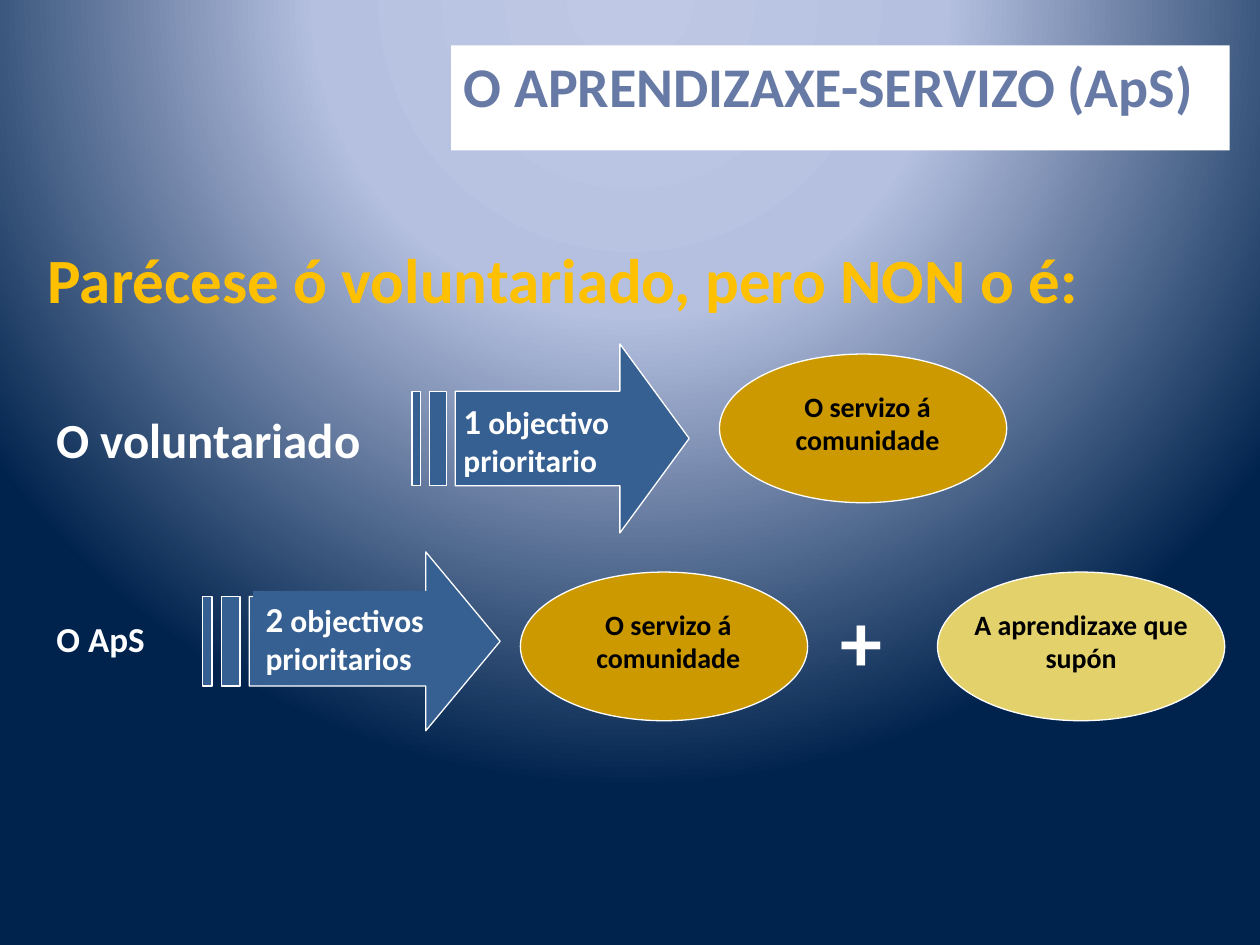
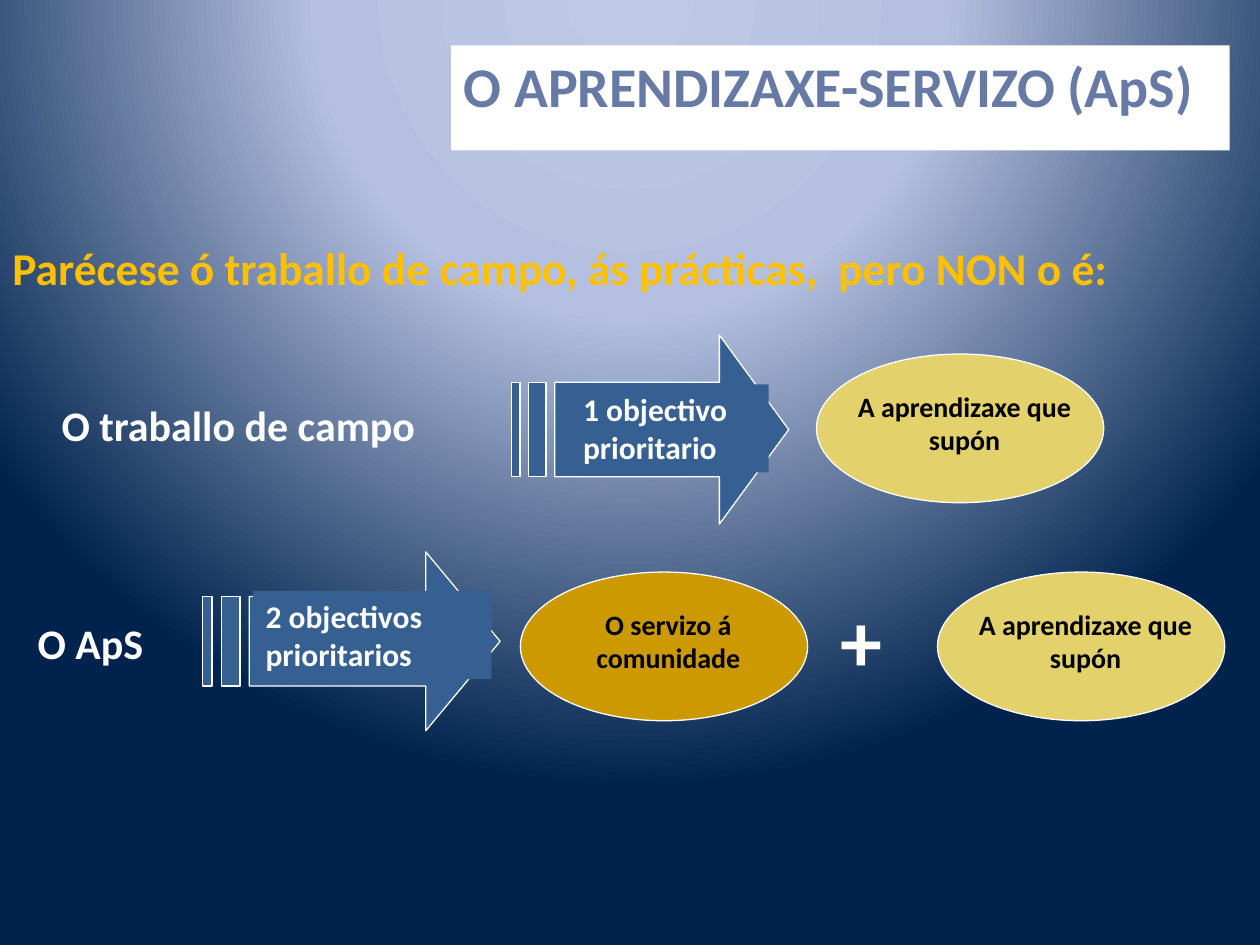
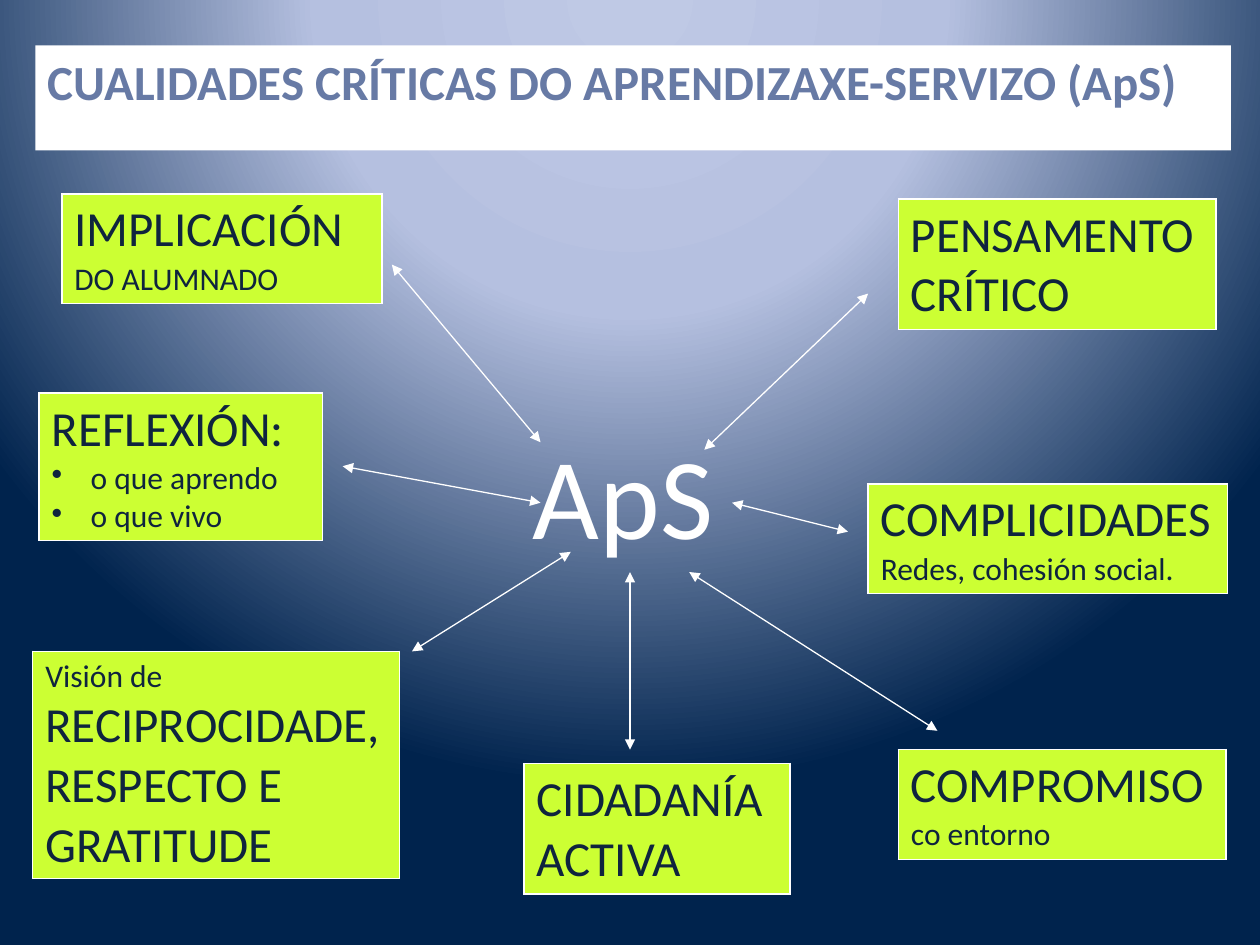
import pptx
import pptx.dml.color
import pptx.enum.shapes
import pptx.enum.text
import pptx.oxml
import pptx.oxml.ns
import pptx.util

Inches = pptx.util.Inches
RGBColor = pptx.dml.color.RGBColor
PP_ALIGN = pptx.enum.text.PP_ALIGN

# Shared look
FONT = "Calibri"
WHITE = RGBColor(0xFF, 0xFF, 0xFF)
BLACK = RGBColor(0x00, 0x00, 0x00)
TITLE_BLUE = RGBColor(0x67, 0x7A, 0xA5)
ARROW_BLUE = RGBColor(0x37, 0x60, 0x92)
AMBER = RGBColor(0xFF, 0xC0, 0x00)
SERVICE_GOLD = RGBColor(0xCC, 0x99, 0x00)
LEARNING_YELLOW = RGBColor(0xE3, 0xD2, 0x6B)
LIME = RGBColor(0xCC, 0xFF, 0x33)
NAVY = RGBColor(0x0F, 0x24, 0x3E)
GLOW_STOPS = [(0, "BFC9E5"), (40, "B5C0E0"), (100, "00234D")]

SERVICE = "O servizo á comunidade"
LEARNING = "A aprendizaxe que supón"
OVAL_WIDTH, OVAL_HEIGHT = 2.28, 1.18


def xml(tag, attributes="", children=""):
    return (f'<{tag} {pptx.oxml.ns.nsdecls("a", "p")} {attributes}>'
            f'{children}</{tag}>')


def set_background(master):
    """Give every slide the radial glow through the master."""
    stops = "".join(f'<a:gs pos="{pos * 1000}"><a:srgbClr val="{color}"/></a:gs>'
                    for pos, color in GLOW_STOPS)
    background = pptx.oxml.parse_xml(xml("p:bg", children=(
        f'<p:bgPr><a:gradFill rotWithShape="1"><a:gsLst>{stops}</a:gsLst>'
        '<a:path path="circle">'
        '<a:fillToRect l="50000" t="-80000" r="50000" b="180000"/></a:path>'
        '</a:gradFill><a:effectLst/></p:bgPr>')))
    common = master.element.find(pptx.oxml.ns.qn("p:cSld"))
    old = common.find(pptx.oxml.ns.qn("p:bg"))
    if old is not None:
        common.remove(old)
    common.insert(0, background)


def write(frame, paragraphs, size=18, color=WHITE, bold=False,
          align=PP_ALIGN.LEFT, bullets_from=None):
    """Fill a frame; a paragraph is a string or a list of (text, size) runs."""
    frame.word_wrap = True
    for index, content in enumerate(paragraphs):
        paragraph = frame.paragraphs[0] if index == 0 else frame.add_paragraph()
        paragraph.alignment = align
        runs = [(content, size)] if isinstance(content, str) else content
        for text, run_size in runs:
            run = paragraph.add_run()
            run.text = text
            run.font.name = FONT
            run.font.size = pptx.util.Pt(run_size)
            run.font.bold = bold
            run.font.color.rgb = color
        if bullets_from is not None and index >= bullets_from:
            properties = paragraph._p.get_or_add_pPr()
            properties.set("marL", str(Inches(0.31)))
            properties.set("indent", str(-Inches(0.31)))
            properties.append(pptx.oxml.parse_xml(xml("a:buChar", 'char="•"')))


def add_text(slide, left, top, width, height, content, fill=None, **text_format):
    box = slide.shapes.add_textbox(*map(Inches, (left, top, width, height)))
    if fill is not None:
        box.fill.solid()
        box.fill.fore_color.rgb = fill
    write(box.text_frame, [content], **text_format)


def add_title(slide, left, width, height, text, size):
    title = slide.shapes.title
    title.left, title.top = Inches(left), Inches(0.36)
    title.width, title.height = Inches(width), Inches(height)
    title.fill.solid()
    title.fill.fore_color.rgb = WHITE
    frame = title.text_frame
    frame.vertical_anchor = pptx.enum.text.MSO_ANCHOR.TOP
    frame.auto_size = pptx.enum.text.MSO_AUTO_SIZE.SHAPE_TO_FIT_TEXT
    write(frame, [text], size=size, color=TITLE_BLUE, bold=True)


def paint(shape, fill):
    shape.shadow.inherit = False
    shape.fill.solid()
    shape.fill.fore_color.rgb = fill
    shape.line.color.rgb = WHITE
    shape.line.width = pptx.util.Pt(0.75)


def add_striped_arrow(slide, left, top, width, height):
    """Right arrow with two stripes behind it, in 32nds of its width."""
    def point(x32, y4):
        return Inches(left + width * x32 / 32), Inches(top + height * y4 / 4)

    arrow = [(24, 0), (24, 1), (5, 1), (5, 3), (24, 3), (24, 4), (32, 2)]
    stripes = [[(a, 1), (a, 3), (b, 3), (b, 1)] for a, b in ((2, 4), (0, 1))]
    builder = slide.shapes.build_freeform(*point(*arrow[0]), scale=1.0)
    builder.add_line_segments([point(*p) for p in arrow[1:]], close=True)
    for stripe in stripes:
        builder.move_to(*point(*stripe[0]))
        builder.add_line_segments([point(*p) for p in stripe[1:]], close=True)
    paint(builder.convert_to_shape(), ARROW_BLUE)


def add_goal(slide, left, top, text, fill, inset=0.23):
    """Oval with its caption laid over it."""
    oval = slide.shapes.add_shape(
        pptx.enum.shapes.MSO_SHAPE.OVAL,
        *map(Inches, (left, top, OVAL_WIDTH, OVAL_HEIGHT)))
    paint(oval, fill)
    width = 1.89 if inset else OVAL_WIDTH
    add_text(slide, left + inset, top + 0.23, width, 0.64, text,
             size=16, color=BLACK, bold=True, align=PP_ALIGN.CENTER)


def add_aps_row(slide, label, patch, learning_inset):
    """Lower row: ApS has two goals, service plus learning."""
    add_striped_arrow(slide, 1.61, 4.38, 2.36, 1.42)
    add_text(slide, *label[:4], "O ApS", size=label[4], bold=True)
    patch_width, patch_height, patch_text = patch
    add_text(slide, 2.01, 4.69, patch_width, patch_height, patch_text,
             fill=ARROW_BLUE, bold=True)
    add_goal(slide, 4.13, 4.54, SERVICE, SERVICE_GOLD)
    add_goal(slide, 7.44, 4.54, LEARNING, LEARNING_YELLOW, learning_inset)
    add_text(slide, 6.57, 4.62, 0.71, 0.9, "+", size=48, bold=True)


def add_quality(slide, left, top, width, height, paragraphs, fill=LIME,
                **text_format):
    """One-cell table; without a fill it has no borders either."""
    table = slide.shapes.add_table(
        1, 1, *map(Inches, (left, top, width, height))).table
    table.first_row = table.horz_banding = False
    cell = table.cell(0, 0)
    write(cell.text_frame, paragraphs, **text_format)
    if fill is None:
        cell.fill.background()
        border = "<a:noFill/>"
    else:
        cell.fill.solid()
        cell.fill.fore_color.rgb = fill
        border = f'<a:solidFill><a:srgbClr val="{WHITE}"/></a:solidFill>'
    properties = cell._tc.get_or_add_tcPr()
    for index, side in enumerate("LRTB"):
        properties.insert(index, pptx.oxml.parse_xml(
            xml(f"a:ln{side}", 'w="12700"', border)))


def add_double_arrow(slide, start, end):
    arrow = slide.shapes.add_connector(
        pptx.enum.shapes.MSO_CONNECTOR.STRAIGHT, *map(Inches, start + end))
    arrow.line.color.rgb = WHITE
    arrow.line.width = pptx.util.Pt(0.75)
    line = arrow.line._get_or_add_ln()
    for tip in ("headEnd", "tailEnd"):
        line.append(pptx.oxml.parse_xml(xml(f"a:{tip}", 'type="triangle"')))
    arrow._element.spPr.append(pptx.oxml.parse_xml(xml("a:effectLst")))


def build_comparison(slide, heading, heading_place, heading_size):
    add_title(slide, 3.58, 6.18, 0.64, "O APRENDIZAXE-SERVIZO (ApS)", 32)
    add_text(slide, *heading_place, heading, size=heading_size,
             color=AMBER, bold=True)


def build_volunteering(slide):
    build_comparison(slide, "Parécese ó voluntariado, pero NON o é:",
                     (0.28, 1.86, 9.72, 0.71), 36)
    add_text(slide, 0.35, 3.2, 2.84, 0.57, "O voluntariado", size=28, bold=True)
    add_striped_arrow(slide, 3.27, 2.73, 2.2, 1.5)
    add_text(slide, 3.58, 3.12, 1.57, 0.74,
             [("1", 20), (" objectivo prioritario", 18)], bold=True)
    add_goal(slide, 5.71, 2.81, SERVICE, SERVICE_GOLD)
    add_aps_row(slide, (0.35, 4.85, 1.1, 0.43, 20),
                (1.5, 0.74, [("2", 20), (" objectivos prioritarios", 18)]), 0)


def build_fieldwork(slide):
    build_comparison(
        slide, "Parécese ó traballo de campo, ás prácticas,  pero NON o é:",
        (0, 1.86, 10, 0.54), 26)
    add_text(slide, 0.39, 3.12, 3.71, 0.51, "O traballo de campo",
             size=24, bold=True)
    add_striped_arrow(slide, 4.06, 2.66, 2.2, 1.5)
    add_text(slide, 4.53, 3.05, 1.57, 0.7, "1 objectivo prioritario",
             fill=ARROW_BLUE, bold=True)
    add_goal(slide, 6.48, 2.81, LEARNING, LEARNING_YELLOW)
    add_aps_row(slide, (0.2, 4.85, 1.26, 0.5, 24),
                (1.89, 0.7, "2 objectivos prioritarios"), 0.23)


def build_qualities(slide):
    add_title(slide, 0.28, 9.49, 0.57,
              "CUALIDADES CRÍTICAS DO APRENDIZAXE-SERVIZO (ApS)", 28)

    # Qualities around the centre
    qualities = [
        (0.49, 1.54, 2.54, 0.87, [[("IMPLICACIÓN", 28), (" DO ALUMNADO", 18)]]),
        (7.13, 1.58, 2.52, 1.03, ["PENSAMENTO CRÍTICO"]),
        (0.26, 5.17, 2.91, 1.8,
         [[("Visión de ", 18), ("RECIPROCIDADE, RESPECTO E GRATITUDE", 28)]]),
        (7.13, 5.95, 2.6, 0.87, [[("COMPROMISO ", 28), ("co entorno", 18)]]),
        (6.89, 3.84, 2.85, 0.87,
         ["COMPLICIDADES", [("Redes, cohesión social.", 18)]]),
        (4.16, 6.06, 2.11, 1.03, ["CIDADANÍA ACTIVA"]),
    ]
    for quality in qualities:
        add_quality(slide, *quality, size=28, color=NAVY)
    add_quality(slide, 0.31, 3.12, 2.25, 1.17,
                ["REFLEXIÓN:", [("o que aprendo", 18)], [("o que vivo", 18)]],
                size=28, color=NAVY, bullets_from=1)
    add_quality(slide, 4.13, 3.36, 1.97, 1.2, ["ApS"], fill=None, size=66)

    # Links between the centre and each quality
    links = [
        ((3.11, 2.1), (4.29, 3.51)),
        ((5.59, 3.57), (6.89, 2.33)),
        ((4.29, 3.99), (2.72, 3.7)),
        ((4.53, 4.38), (3.27, 5.17)),
        ((5, 4.54), (5, 5.95)),
        ((5.81, 3.99), (6.73, 4.22)),
        ((5.47, 4.54), (7.44, 5.8)),
    ]
    for start, end in links:
        add_double_arrow(slide, start, end)


def main():
    deck = pptx.Presentation()
    deck.slide_width, deck.slide_height = Inches(10), Inches(7.5)
    set_background(deck.slide_master)
    title_only = deck.slide_layouts[5]
    for build in (build_volunteering, build_fieldwork, build_qualities):
        build(deck.slides.add_slide(title_only))
    deck.save("out.pptx")


if __name__ == "__main__":
    main()
